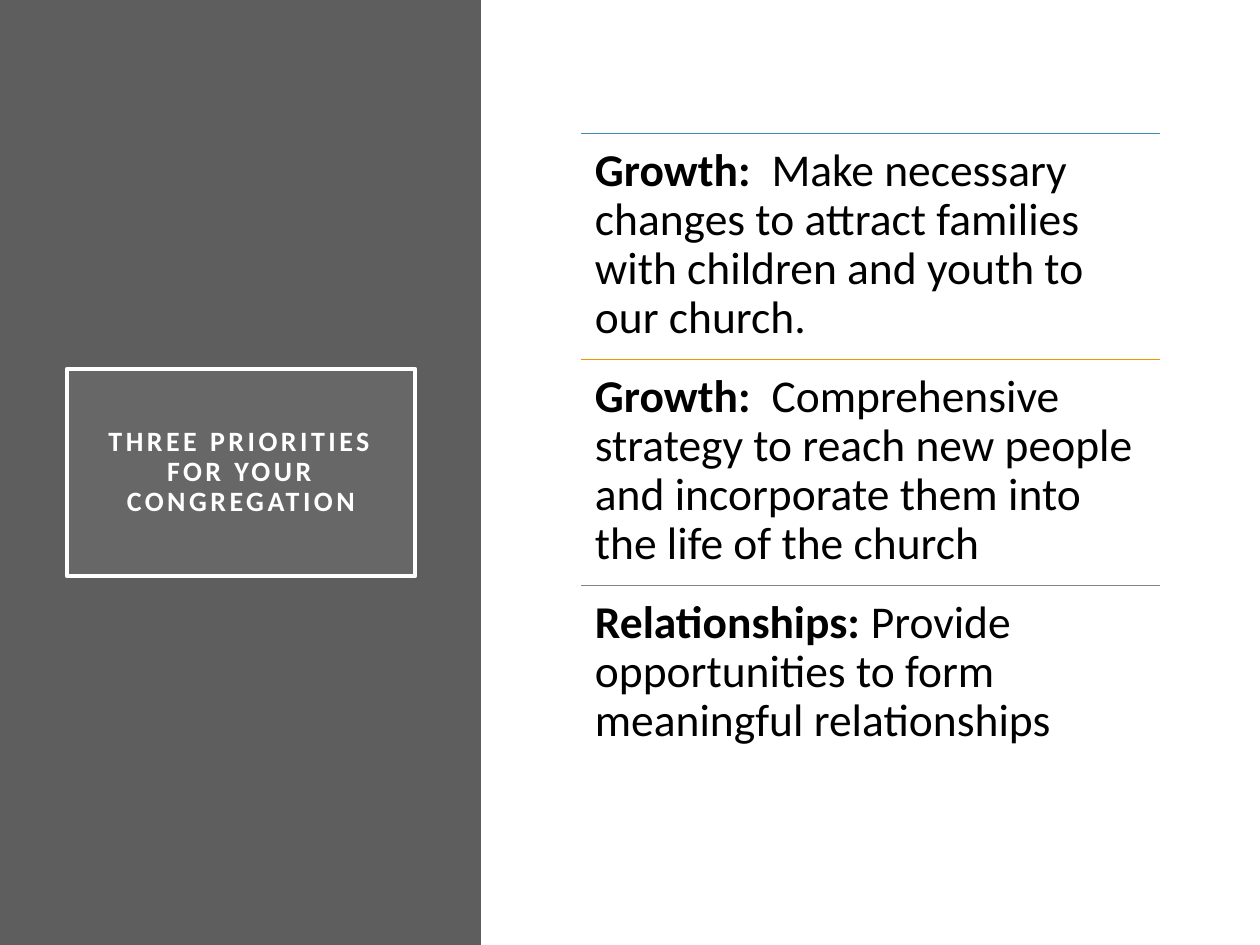
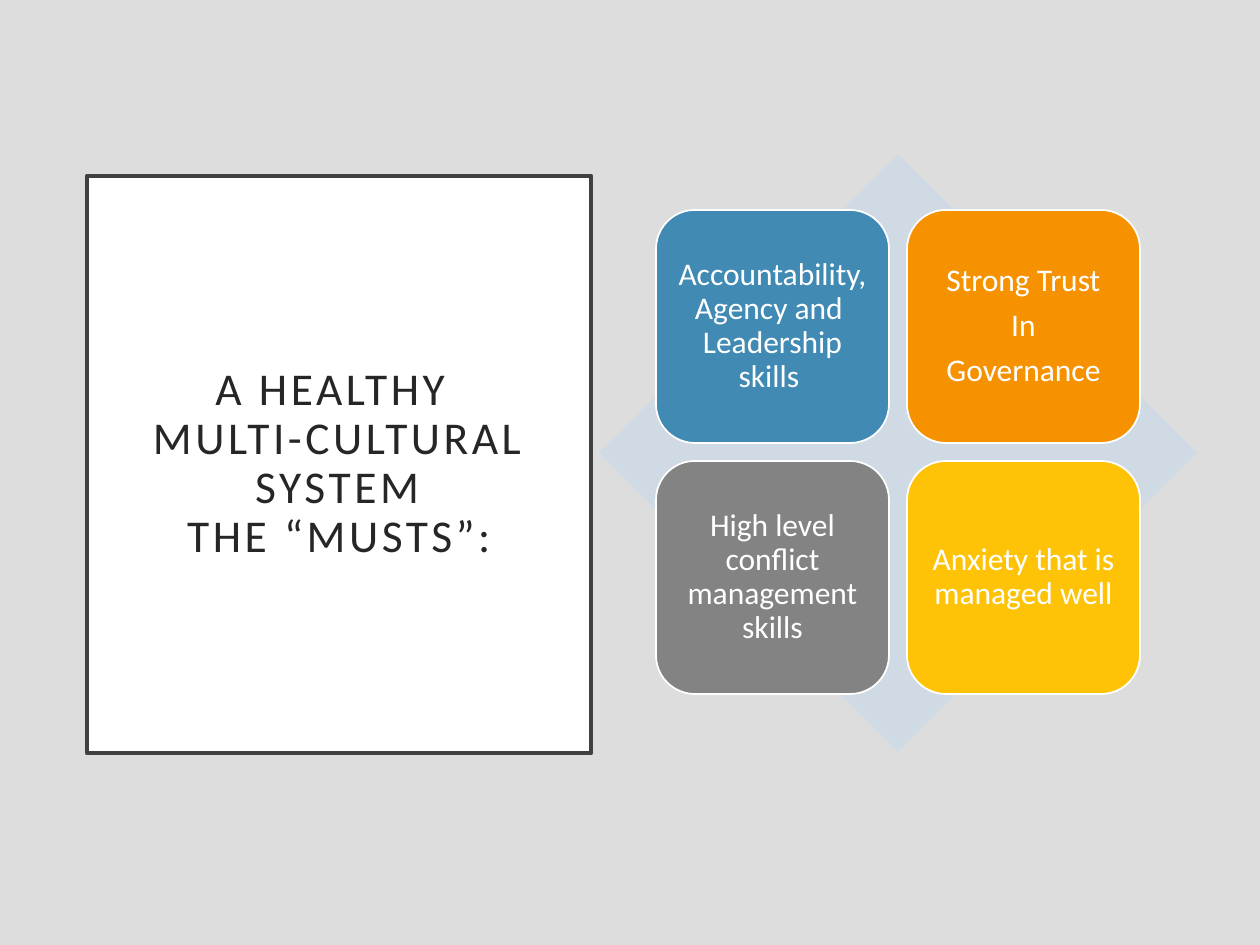
from lxml.etree import SubElement
from pptx import Presentation
from pptx.dml.color import RGBColor
from pptx.enum.shapes import MSO_CONNECTOR, MSO_SHAPE
from pptx.enum.text import MSO_ANCHOR, MSO_AUTO_SIZE, PP_ALIGN
from pptx.oxml.ns import qn
from pptx.util import Emu, Inches, Pt

WHITE = RGBColor(0xFF, 0xFF, 0xFF)
BLACK = RGBColor(0x00, 0x00, 0x00)
INK = RGBColor(0x26, 0x26, 0x26)
FRAME = RGBColor(0x40, 0x40, 0x40)
BAND = RGBColor(0x5E, 0x5E, 0x5E)
VEIL = RGBColor(0x9E, 0x9E, 0x9E)
PALE = RGBColor(0xDD, 0xDD, 0xDD)
MIST = RGBColor(0xCF, 0xDA, 0xE5)
BLUE = RGBColor(0x41, 0x8A, 0xB3)
ORANGE = RGBColor(0xF6, 0x92, 0x00)
GRAY = RGBColor(0x83, 0x83, 0x83)
GOLD = RGBColor(0xFE, 0xC3, 0x06)

FONT = "Calibri"
SCALE = Inches(1) / 126

GOALS_TITLE = "THREE PRIORITIES FOR YOUR CONGREGATION"
GOALS = [
    (BLUE, "Growth:  ", "Make necessary changes to attract families "
     "with children and youth to our church."),
    (ORANGE, "Growth:  ", "Comprehensive strategy to reach new people "
     "and incorporate them into the life of the church"),
    (GRAY, "Relationships: ", "Provide opportunities to form "
     "meaningful relationships"),
]
MUSTS_TITLE = "A HEALTHY \vMULTI-CULTURAL SYSTEM\vTHE “MUSTS”:"
MUSTS = [
    (BLUE, ["Accountability, Agency and  Leadership skills "]),
    (ORANGE, ["Strong Trust", "In", "Governance"]),
    (GRAY, ["High level conflict management skills"]),
    (GOLD, ["Anxiety that is managed well"]),
]


def px(*nums):
    return [Emu(round(n * SCALE)) for n in nums]


def paint(shape, fill, line=None, width=0):
    shape.fill.solid()
    shape.fill.fore_color.rgb = fill
    if line is None:
        shape.line.fill.background()
    else:
        shape.line.color.rgb = line
        shape.line.width = Pt(width)


def add_form(slide, kind, box, fill, line=None, width=0):
    shape = slide.shapes.add_shape(kind, *px(*box))
    shape.shadow.inherit = False
    paint(shape, fill, line, width)
    return shape


def set_frame(frame, inset, anchor):
    frame.word_wrap = True
    frame.auto_size = MSO_AUTO_SIZE.NONE
    frame.vertical_anchor = anchor
    pad, = px(inset)
    frame.margin_left = frame.margin_right = pad
    frame.margin_top = frame.margin_bottom = pad


def style(frame, size, color, align, after=0.0):
    for para in frame.paragraphs:
        para.alignment = align
        para.line_spacing = 0.9
        para.space_after = Pt(round(size * after, 1))
        for run in para.runs:
            run.font.name = FONT
            run.font.size = Pt(size)
            run.font.color.rgb = color


def set_title(slide, text, box, fill, line, size, color, bold=False):
    title = slide.shapes.title
    title.left, title.top, title.width, title.height = px(*box)
    paint(title, fill, line, 2.5)
    frame = title.text_frame
    frame.text = text
    set_frame(frame, 25, MSO_ANCHOR.MIDDLE)
    style(frame, size, color, PP_ALIGN.CENTER)
    for run in frame.paragraphs[0].runs:
        run.font.bold = bold
        run.font._element.set("spc", "200")
    return title


def fade(shape, percent):
    """Make a solid fill partly transparent."""
    tint = shape.fill._xPr.find(qn("a:solidFill"))[0]
    SubElement(tint, qn("a:alpha"), val=str(percent * 1000))


def add_rule(slide, left, top, width, color):
    rule = slide.shapes.add_connector(
        MSO_CONNECTOR.STRAIGHT, *px(left, top, left + width, top))
    rule.line.color.rgb = color
    rule.line.width = Pt(0.5)
    SubElement(rule._element.spPr, qn("a:effectLst"))


def build_goals(slide):
    add_form(slide, MSO_SHAPE.RECTANGLE, (0, 0, 481, 945), BAND)
    title = set_title(slide, GOALS_TITLE, (67, 369, 348, 207),
                      VEIL, WHITE, 16, WHITE, True)
    fade(title, 15)
    # The title sits above the band
    slide.shapes._spTree.append(title._element)
    left, top, width, step = 581, 133, 579, 226
    for i, (color, head, body) in enumerate(GOALS):
        y = top + i * step
        add_rule(slide, left, y, width, color)
        frame = slide.shapes.add_textbox(*px(left, y, width, step)).text_frame
        set_frame(frame, 14, MSO_ANCHOR.TOP)
        para = frame.paragraphs[0]
        for text, bold in (head, True), (body, False):
            run = para.add_run()
            run.text = text
            run.font.bold = bold
        style(frame, 26, BLACK, PP_ALIGN.LEFT, 0.35)


def build_musts(slide):
    slide.background.fill.solid()
    slide.background.fill.fore_color.rgb = PALE
    set_title(slide, MUSTS_TITLE, (87, 176, 504, 577), WHITE, FRAME, 26, INK)
    add_form(slide, MSO_SHAPE.DIAMOND, (599, 154, 598, 598), MIST)
    left, top, side, gap = 656, 210, 233, 18
    for i, (color, lines) in enumerate(MUSTS):
        row, col = divmod(i, 2)
        box = (left + col * (side + gap), top + row * (side + gap), side, side)
        tile = add_form(slide, MSO_SHAPE.ROUNDED_RECTANGLE, box,
                        color, WHITE, 1)
        frame = tile.text_frame
        frame.text = "\n".join(lines)
        set_frame(frame, 9, MSO_ANCHOR.MIDDLE)
        style(frame, 18, WHITE, PP_ALIGN.CENTER, 0.35)


def main():
    deck = Presentation()
    deck.slide_width, deck.slide_height = px(1260, 945)
    for build in build_goals, build_musts:
        build(deck.slides.add_slide(deck.slide_layouts[5]))
    deck.save("out.pptx")


if __name__ == "__main__":
    main()
